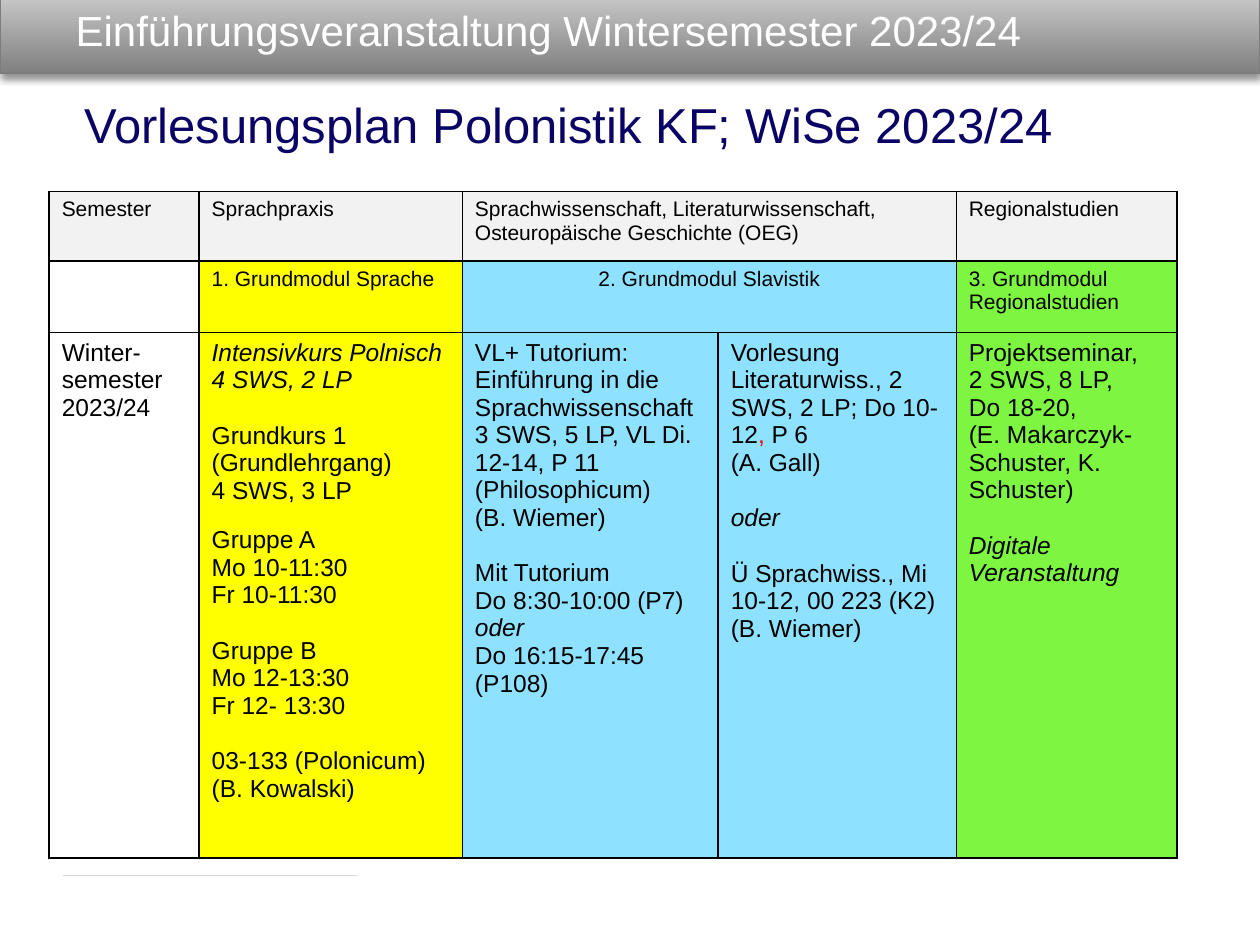
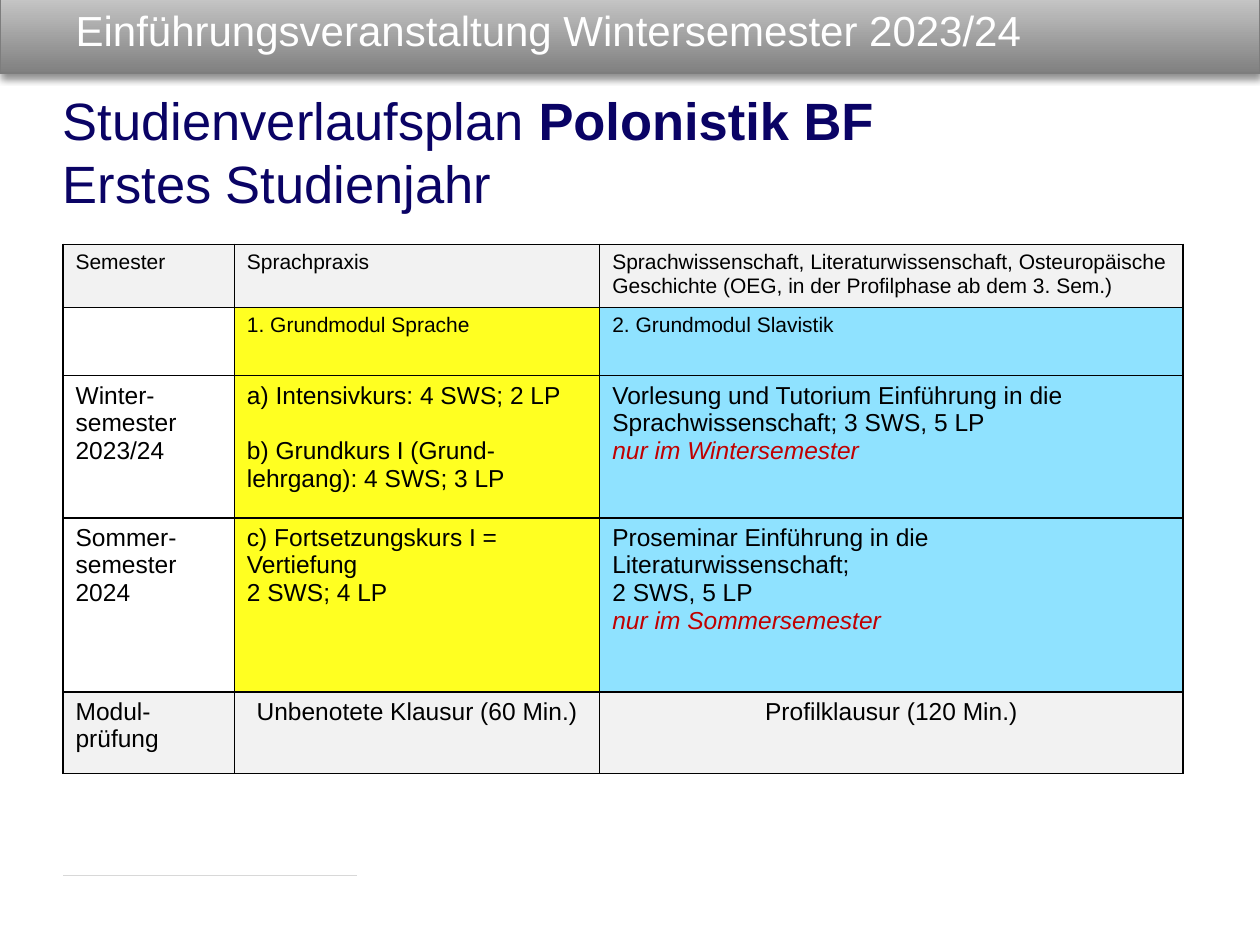
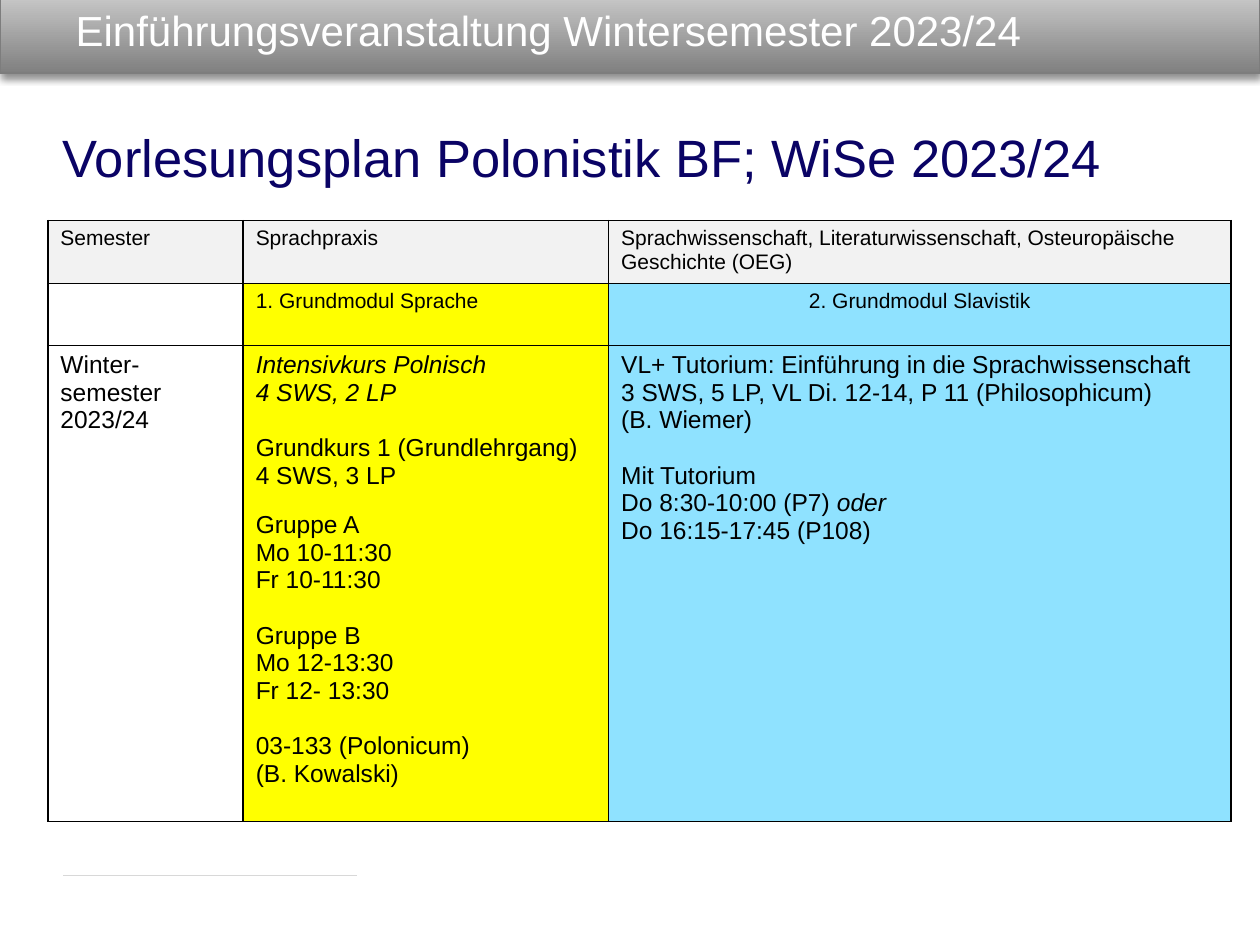
import pptx
import pptx.util
import pptx.dml.color
import pptx.enum.shapes
import pptx.enum.text
import pptx.oxml
import pptx.oxml.ns
from lxml import etree

Inches = pptx.util.Inches
Pt = pptx.util.Pt
CENTER = pptx.enum.text.PP_ALIGN.CENTER
LEFT = pptx.enum.text.PP_ALIGN.LEFT

FONT = "Arial"
BLACK, WHITE, NAVY = "000000", "FFFFFF", "0A0365"
RED, DARK_RED = "FF0000", "C00000"
GREY, YELLOW, LEMON, BLUE, GREEN = "F2F2F2", "FFFF00", "FFFF21", "8FE2FF", "7DF541"
GAP, SMALL_GAP = 16, 12.5
TITLE = "Einführungsveranstaltung Wintersemester 2023/24"


def rgb(value):
    return pptx.dml.color.RGBColor.from_string(value)


def add_run(p, text, size=14, color=BLACK, bold=False, italic=False):
    r = p.add_run()
    r.text = text
    r.font.name = FONT
    r.font.size = Pt(size)
    r.font.color.rgb = rgb(color)
    r.font.bold = bold
    r.font.italic = italic


def line(*runs, gap=0, align=LEFT, **fmt):
    return {"runs": runs, "gap": gap, "align": align, "fmt": fmt}


def write(tf, lines, **fmt):
    for i, item in enumerate(lines):
        if isinstance(item, str):
            item = line(item)
        p = tf.paragraphs[0] if i == 0 else tf.add_paragraph()
        p.alignment = item["align"]
        if item["gap"]:
            p.space_before = Pt(item["gap"])
        for run in item["runs"]:
            text, own = (run, {}) if isinstance(run, str) else run
            add_run(p, text, **{**fmt, **item["fmt"], **own})


def add_effects(sp, xml=None):
    effects = etree.SubElement(sp.element.spPr, pptx.oxml.ns.qn("a:effectLst"))
    if xml:
        effects.append(pptx.oxml.parse_xml(xml))


def decorate_layout(layout, slide):
    band = slide.shapes.add_shape(pptx.enum.shapes.MSO_SHAPE.RECTANGLE,
                                  0, Inches(-0.08), Inches(10), Inches(0.66))
    band.fill.gradient()
    band.fill.gradient_angle = 90
    for stop, color in zip(band.fill.gradient_stops, ("808080", "CDCDCD")):
        stop.color.rgb = rgb(color)
    band.line.color.rgb = rgb("7D7D7D")
    band.line.width = Pt(0.75)
    add_effects(band, f'<a:outerShdw {pptx.oxml.ns.nsdecls("a")} blurRad="{Pt(4)}" '
                      f'dist="{Pt(3)}" dir="5400000" rotWithShape="0">'
                      '<a:srgbClr val="000000"><a:alpha val="43000"/></a:srgbClr></a:outerShdw>')
    rule = slide.shapes.add_connector(pptx.enum.shapes.MSO_CONNECTOR.STRAIGHT,
                                      Inches(0.5), Inches(6.95), Inches(2.83), Inches(6.95))
    rule.line.color.rgb = rgb("D8D8D8")
    rule.line.width = Pt(0.75)
    add_effects(rule)
    for i, sp in enumerate((band, rule)):
        layout.shapes.element.insert(2 + i, sp.element)


def place_title(slide):
    sp = slide.shapes.title
    sp.left, sp.top, sp.width, sp.height = map(Inches, (0.5, 0, 9.27, 0.47))
    tf = sp.text_frame
    tf.auto_size = pptx.enum.text.MSO_AUTO_SIZE.NONE
    tf.vertical_anchor = pptx.enum.text.MSO_ANCHOR.MIDDLE
    write(tf, [TITLE], size=24, color=WHITE)


def add_heading(slide, box, lines, size):
    tf = slide.shapes.add_textbox(*map(Inches, box)).text_frame
    tf.word_wrap = True
    write(tf, lines, size=size, color=NAVY)


def set_borders(cell):
    tcPr = cell._tc.get_or_add_tcPr()
    for i, side in enumerate("LRTB"):
        tcPr.insert(i, pptx.oxml.parse_xml(
            f'<a:ln{side} {pptx.oxml.ns.nsdecls("a")} w="{Pt(1)}">'
            f'<a:solidFill><a:srgbClr val="{BLACK}"/></a:solidFill></a:ln{side}>'))


def add_plan(slide, left, top, widths, heights, rows, spans=()):
    table = slide.shapes.add_table(len(heights), len(widths), Inches(left), Inches(top),
                                   Inches(sum(widths)), Inches(sum(heights))).table
    table.first_row = False
    table.horz_banding = False
    for column, width in zip(table.columns, widths):
        column.width = Inches(width)
    for row, height in zip(table.rows, heights):
        row.height = Inches(height)
    for r, cells in enumerate(rows):
        for c, (lines, fill) in enumerate(cells):
            cell = table.cell(r, c)
            if fill:
                cell.fill.solid()
                cell.fill.fore_color.rgb = rgb(fill)
            else:
                cell.fill.background()
            set_borders(cell)
            write(cell.text_frame, lines, size=12 if r < 2 else 14)
    for r, first, last in spans:
        table.cell(r, first).merge(table.cell(r, last))


def shade(fill, *texts):
    return [([text], fill) for text in texts]


EMPTY = ([], None)
WINTER = (["Winter-semester 2023/24"], None)
SUBJECTS = "Sprachwissenschaft, Literaturwissenschaft, Osteuropäische Geschichte (OEG"
LANGUAGE_MODULE = "1. Grundmodul Sprache"
SLAVIC_MODULE = "2. Grundmodul Slavistik"
POLISH_COURSES = ([
    line("Intensivkurs Polnisch", italic=True),
    line("4 SWS, 2 LP", italic=True),
    line("Grundkurs 1 (Grundlehrgang)", gap=GAP),
    "4 SWS, 3 LP",
    line("Gruppe A", gap=SMALL_GAP),
    "Mo 10-11:30",
    "Fr 10-11:30",
    line("Gruppe B", gap=GAP),
    "Mo 12-13:30",
    "Fr 12- 13:30",
    line("03-133 (Polonicum)", gap=GAP),
    "(B. Kowalski)",
], YELLOW)
LINGUISTICS = ([
    "VL+ Tutorium: Einführung in die Sprachwissenschaft",
    "3 SWS, 5 LP, VL Di. 12-14, P 11 (Philosophicum)",
    "(B. Wiemer)",
    line("Mit Tutorium", gap=GAP),
    line("Do 8:30-10:00 (P7) ", ("oder", {"italic": True})),
    "Do 16:15-17:45 (P108)",
], BLUE)


def build_core_lectures(slide):
    add_heading(slide, (0.57, 0.7, 8.37, 0.57),
                ["Vorlesungsplan Polonistik KF; WiSe 2023/24"], 28)
    literature = ([
        line("Vorlesung Literaturwiss., 2 SWS, 2 LP; Do 10-12", (", ", {"color": RED}), "P 6"),
        "(A. Gall)",
        line("oder", gap=GAP, italic=True),
        line("Ü Sprachwiss., Mi 10-12, 00 223 (K2) (B. Wiemer)", gap=GAP),
    ], BLUE)
    project = ([
        "Projektseminar,",
        "2 SWS, 8 LP,",
        "Do 18-20,",
        "(E. Makarczyk-Schuster, K. Schuster)",
        line("Digitale Veranstaltung", gap=GAP, italic=True),
    ], GREEN)
    rows = [
        shade(GREY, "Semester", "Sprachpraxis", SUBJECTS + ")")
        + [([], GREY), (["Regionalstudien"], GREY)],
        [EMPTY, ([LANGUAGE_MODULE], YELLOW), ([line(SLAVIC_MODULE, align=CENTER)], BLUE),
         ([], BLUE), (["3. Grundmodul Regionalstudien"], GREEN)],
        [WINTER, POLISH_COURSES, LINGUISTICS, literature, project],
    ]
    add_plan(slide, 0.39, 1.52, (1.19, 2.09, 2.03, 1.89, 1.75), (0.55, 0.57, 4.17),
             rows, spans=((0, 2, 3), (1, 2, 3)))


def build_first_year(slide):
    add_heading(slide, (0.4, 0.65, 8.99, 1.1),
                [line("Studienverlaufsplan ", ("Polonistik BF", {"bold": True})),
                 "Erstes Studienjahr"], 30)
    rows = [
        shade(GREY, "Semester", "Sprachpraxis",
              SUBJECTS + ", in der Profilphase ab dem 3. Sem.)"),
        [EMPTY, ([LANGUAGE_MODULE], LEMON), ([SLAVIC_MODULE], BLUE)],
        [WINTER,
         (["a) Intensivkurs: 4 SWS; 2 LP",
           line("b) Grundkurs I (Grund-lehrgang): 4 SWS; 3 LP", gap=GAP)], LEMON),
         (["Vorlesung und Tutorium Einführung in die",
           "Sprachwissenschaft; 3 SWS, 5 LP",
           line("nur im Wintersemester", color=DARK_RED, italic=True)], BLUE)],
        [(["Sommer-semester 2024"], None),
         (["c) Fortsetzungskurs I = Vertiefung", "2 SWS; 4 LP"], LEMON),
         (["Proseminar Einführung in die Literaturwissenschaft;",
           "2 SWS, 5 LP",
           line("nur im Sommersemester", color=DARK_RED, italic=True)], BLUE)],
        shade(GREY, "Modul-prüfung", line("Unbenotete Klausur (60 Min.)", align=CENTER),
              line("Profilklausur (120 Min.)", align=CENTER)),
    ]
    add_plan(slide, 0.5, 1.94, (1.36, 2.9, 4.63), (0.5, 0.54, 1.13, 1.38, 0.65), rows)


def build_minor_lectures(slide):
    add_heading(slide, (0.4, 0.94, 8.85, 0.61),
                ["Vorlesungsplan Polonistik BF; WiSe 2023/24"], 30)
    rows = [
        shade(GREY, "Semester", "Sprachpraxis", SUBJECTS + ")"),
        [EMPTY, ([LANGUAGE_MODULE], YELLOW), ([line(SLAVIC_MODULE, align=CENTER)], BLUE)],
        [WINTER, POLISH_COURSES, LINGUISTICS],
    ]
    add_plan(slide, 0.38, 1.75, (1.55, 2.9, 4.94), (0.5, 0.49, 3.78), rows)


def main():
    prs = pptx.Presentation()
    prs.slide_width, prs.slide_height = Inches(10), Inches(7.5)
    layout = prs.slide_layouts[5]
    for i, build in enumerate((build_core_lectures, build_first_year, build_minor_lectures)):
        slide = prs.slides.add_slide(layout)
        if i == 0:
            decorate_layout(layout, slide)
        place_title(slide)
        build(slide)
    prs.save("out.pptx")


if __name__ == "__main__":
    main()
